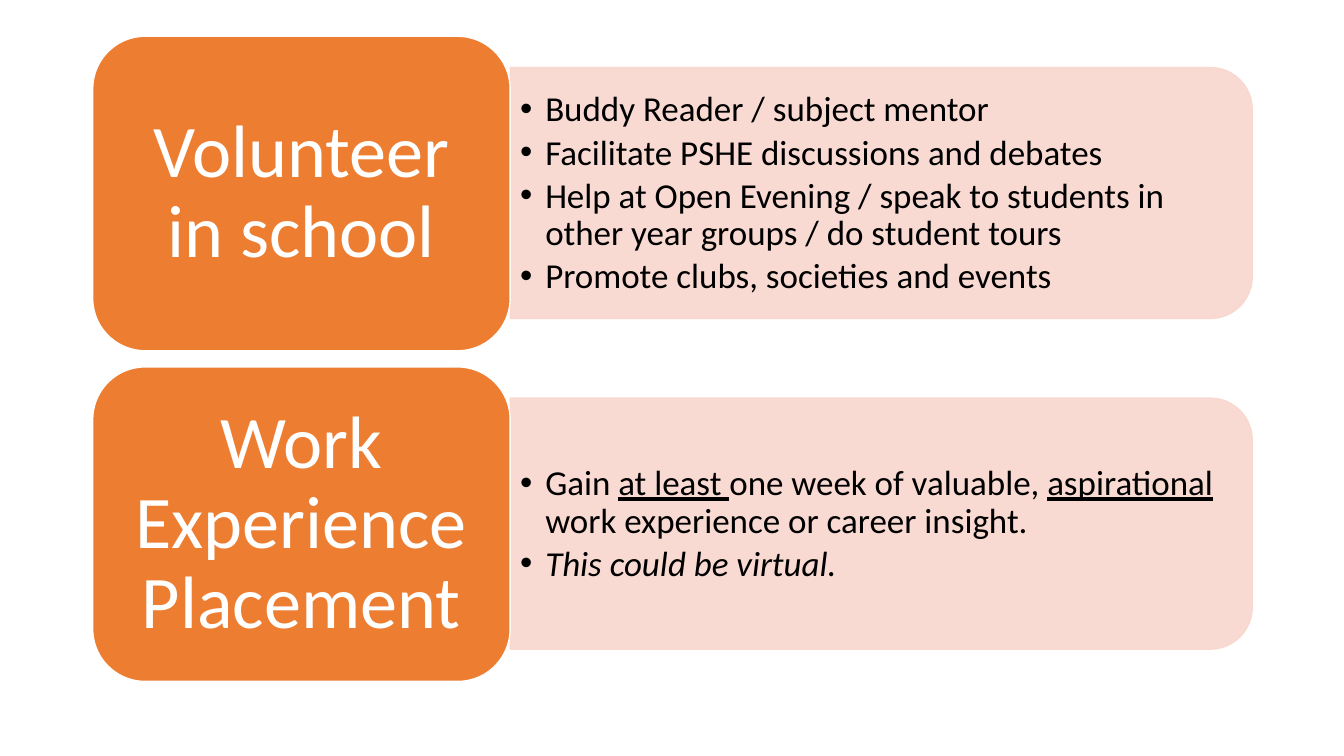
from dataclasses import dataclass

from lxml import etree
from pptx import Presentation
from pptx.dml.color import RGBColor
from pptx.enum.shapes import MSO_SHAPE
from pptx.enum.text import MSO_ANCHOR, PP_ALIGN
from pptx.oxml.ns import qn
from pptx.util import Emu, Pt

ROUND_RECT = MSO_SHAPE.ROUNDED_RECTANGLE
ROUND_TOP = MSO_SHAPE.ROUND_2_SAME_RECTANGLE
MIDDLE = MSO_ANCHOR.MIDDLE
CENTER = PP_ALIGN.CENTER


def px(n: float) -> Emu:
    """100 px to the inch."""
    return Emu(round(n * 9144))


@dataclass(frozen=True)
class Theme:
    font: str = "Calibri"
    orange: RGBColor = RGBColor(0xED, 0x7D, 0x31)
    pink: RGBColor = RGBColor(0xF8, 0xD7, 0xCE)
    white: RGBColor = RGBColor(0xFF, 0xFF, 0xFF)
    black: RGBColor = RGBColor(0, 0, 0)
    pink_alpha: int = 90
    label_size: int = 53
    body_size: int = 25
    line_spacing: float = 0.9
    bullet_gap: float = 3.75


@dataclass(frozen=True)
class Span:
    text: str
    underline: bool = False
    italic: bool = False


@dataclass(frozen=True)
class Box:
    left: int
    top: int
    width: int
    height: int

    def down(self, dy: int) -> "Box":
        return Box(self.left, self.top + dy, self.width, self.height)

    def emu(self) -> tuple[Emu, Emu, Emu, Emu]:
        return px(self.left), px(self.top), px(self.width), px(self.height)


@dataclass(frozen=True)
class Row:
    label: str
    bullets: list[list[Span]]


THEME = Theme()
ROW_PITCH = 328
LABEL = Box(92, 36, 414, 312)
PANEL = Box(506, 67, 736, 249)
BODY = Box(506, 80, 724, 225)

ROWS = [
    Row("Volunteer in school", [
        [Span("Buddy Reader / subject mentor")],
        [Span("Facilitate PSHE discussions and debates")],
        [Span("Help at Open Evening / speak to students in other year groups / do student tours")],
        [Span("Promote clubs, societies and events")],
    ]),
    Row("Work Experience Placement", [
        [Span("Gain "), Span("at least ", underline=True),
         Span("one week of valuable, "), Span("aspirational", underline=True),
         Span(" work experience or career insight.")],
        [Span("This could be virtual.", italic=True)],
    ]),
]


def setup_frame(tf, inset_x: int, inset_y: int) -> None:
    tf.word_wrap = True
    tf.vertical_anchor = MIDDLE
    tf.margin_left = tf.margin_right = px(inset_x)
    tf.margin_top = tf.margin_bottom = px(inset_y)


def add_run(p, span: Span, size: int, color: RGBColor) -> None:
    r = p.add_run()
    r.text = span.text
    r.font.name = THEME.font
    r.font.size = Pt(size)
    r.font.color.rgb = color
    if span.underline:
        r.font.underline = True
    if span.italic:
        r.font.italic = True


def add_block(s, kind, box: Box, fill: RGBColor, line: RGBColor):
    sp = s.shapes.add_shape(kind, *box.emu())
    sp.shadow.inherit = False
    sp.fill.solid()
    sp.fill.fore_color.rgb = fill
    sp.line.color.rgb = line
    sp.line.width = Pt(1)
    return sp


def add_panel(s, box: Box) -> None:
    # A quarter turn puts the rounded corners on the right
    sp = add_block(s, ROUND_TOP, box, THEME.pink, THEME.pink)
    sp.width, sp.height = px(box.height), px(box.width)
    sp.left = px(box.left + (box.width - box.height) / 2)
    sp.top = px(box.top + (box.height - box.width) / 2)
    sp.rotation = 90
    for clr in sp._element.spPr.iter(qn("a:srgbClr")):
        etree.SubElement(clr, qn("a:alpha"), val=str(THEME.pink_alpha * 1000))


def add_bullets(s, box: Box, bullets: list[list[Span]]) -> None:
    tf = s.shapes.add_textbox(*box.emu()).text_frame
    setup_frame(tf, 10, 5)
    for i, spans in enumerate(bullets):
        p = tf.add_paragraph() if i else tf.paragraphs[0]
        p.level = 1
        p.line_spacing = THEME.line_spacing
        p.space_after = Pt(THEME.bullet_gap)
        pPr = p._p.get_or_add_pPr()
        pPr.set("marL", str(px(25)))
        pPr.set("indent", str(px(-25)))
        etree.SubElement(pPr, qn("a:buFont"), typeface="Arial")
        etree.SubElement(pPr, qn("a:buChar"), char="•")
        for span in spans:
            add_run(p, span, THEME.body_size, THEME.black)


def add_label(s, box: Box, text: str) -> None:
    tf = add_block(s, ROUND_RECT, box, THEME.orange, THEME.white).text_frame
    setup_frame(tf, 22, 11)
    p = tf.paragraphs[0]
    p.alignment = CENTER
    p.line_spacing = THEME.line_spacing
    add_run(p, Span(text), THEME.label_size, THEME.white)


def main() -> None:
    prs = Presentation()
    prs.slide_width, prs.slide_height = px(1333), px(750)
    s = prs.slides.add_slide(prs.slide_layouts[6])

    # Each row: pink panel, its bullets, then the orange label
    for i, row in enumerate(ROWS):
        dy = i * ROW_PITCH
        add_panel(s, PANEL.down(dy))
        add_bullets(s, BODY.down(dy), row.bullets)
        add_label(s, LABEL.down(dy), row.label)

    prs.save("out.pptx")


if __name__ == "__main__":
    main()
